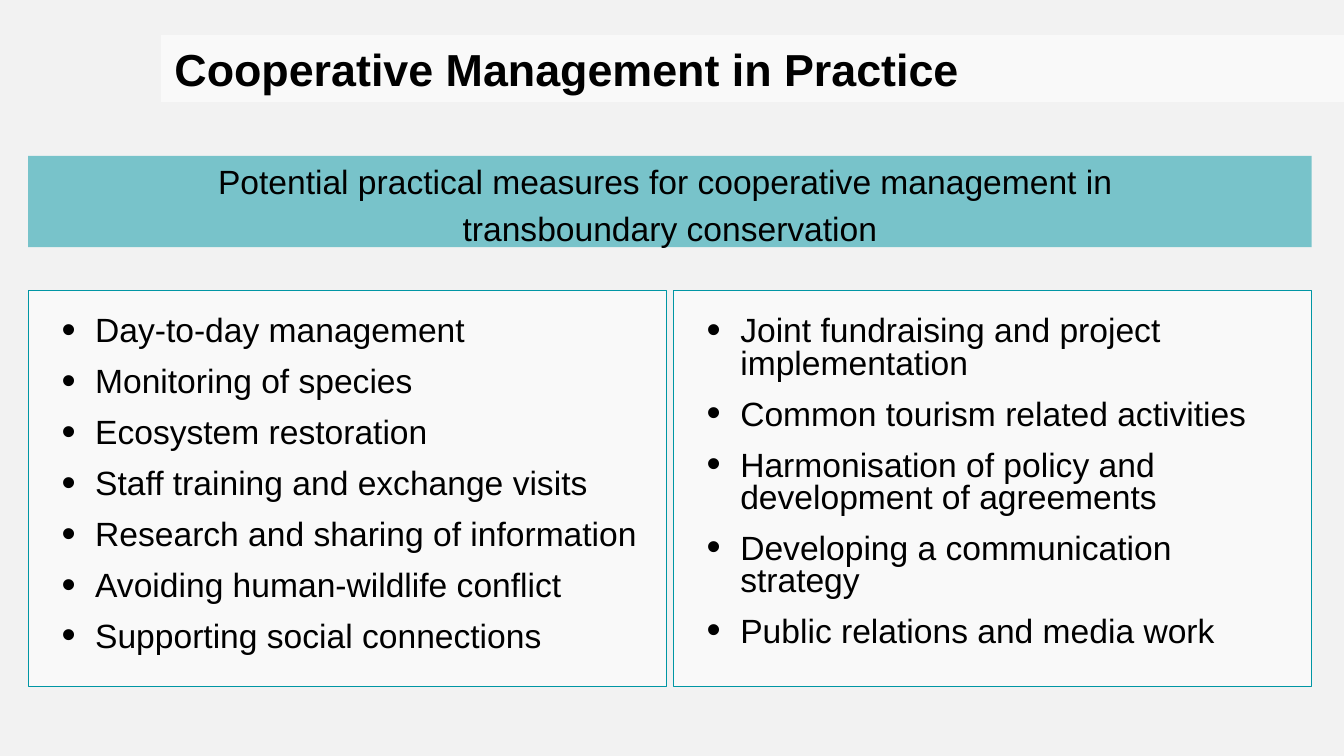
from lxml import etree
from pptx import Presentation
from pptx.dml.color import RGBColor
from pptx.enum.shapes import MSO_SHAPE
from pptx.enum.text import MSO_ANCHOR, PP_ALIGN
from pptx.oxml.ns import qn
from pptx.util import Inches, Pt

RECT = MSO_SHAPE.RECTANGLE
TOP, MIDDLE = MSO_ANCHOR.TOP, MSO_ANCHOR.MIDDLE
LEFT, CENTER = PP_ALIGN.LEFT, PP_ALIGN.CENTER

COLORS = {"back": "F2F2F2", "white": "FFFFFF", "teal": "0096A4", "text": "000000"}
FONT = "Arial"

# Grid in inches: a 16:9 slide, two columns between equal side margins
WIDTH = 10
HEIGHT = WIDTH * 9 / 16
EDGE, COL, GAP = 0.21, 4.75, 0.05
SPAN = 2 * COL + GAP

TITLE = "Cooperative Management in Practice"
BANNER = [
    "Potential practical measures for cooperative management in ",
    "transboundary conservation",
]
LISTS = [
    [
        "Day-to-day management",
        "Monitoring of species",
        "Ecosystem restoration",
        "Staff training and exchange visits",
        "Research and sharing of information",
        "Avoiding human-wildlife conflict",
        "Supporting social connections",
    ],
    [
        "Joint fundraising and project implementation",
        "Common tourism related activities",
        "Harmonisation of policy and development of agreements",
        "Developing a communication strategy",
        "Public relations and media work",
    ],
]


def color(name):
    return RGBColor.from_string(COLORS[name])


def add_panel(slide, box, fill, alpha, line=None, anchor=MIDDLE,
              insets=(0.1, 0.05, 0.1, 0.05)):
    """Add a see-through rectangle and return its text frame."""
    shape = slide.shapes.add_shape(RECT, *[Inches(n) for n in box])
    shape.shadow.inherit = False
    shape.fill.solid()
    shape.fill.fore_color.rgb = color(fill)
    tint = shape.fill._xPr.find(".//" + qn("a:srgbClr"))
    etree.SubElement(tint, qn("a:alpha"), val=str(alpha * 1000))
    if line:
        shape.line.color.rgb = color(line)
        shape.line.width = Pt(0.75)
    else:
        shape.line.fill.background()
    frame = shape.text_frame
    frame.word_wrap = True
    frame.vertical_anchor = anchor
    (frame.margin_left, frame.margin_top,
     frame.margin_right, frame.margin_bottom) = [Inches(n) for n in insets]
    return frame


def add_bullet(para):
    """Give a paragraph a hanging round bullet."""
    props = para._p.get_or_add_pPr()
    props.set("marL", str(Inches(0.4)))
    props.set("indent", str(Inches(-0.25)))
    tint = etree.SubElement(props, qn("a:buClr"))
    etree.SubElement(tint, qn("a:srgbClr"), val=COLORS["text"])
    etree.SubElement(props, qn("a:buSzPct"), val="120000")
    etree.SubElement(props, qn("a:buFont"), typeface=FONT)
    etree.SubElement(props, qn("a:buChar"), char="•")


def add_lines(frame, lines, size=18, bold=False, align=LEFT, space=1.0,
              before=0, bullet=False):
    """Write one paragraph per line of text."""
    for i, text in enumerate(lines):
        para = frame.add_paragraph() if i else frame.paragraphs[0]
        if bullet:
            add_bullet(para)
        para.alignment = align
        para.line_spacing = space
        para.space_before = Pt(before if i else 0)
        run = para.add_run()
        run.text = text
        run.font.name = FONT
        run.font.size = Pt(size)
        run.font.bold = bold
        run.font.color.rgb = color("text")


def main():
    deck = Presentation()
    deck.slide_width, deck.slide_height = Inches(WIDTH), Inches(HEIGHT)
    slide = deck.slides.add_slide(deck.slide_layouts[6])
    slide.background.fill.solid()
    slide.background.fill.fore_color.rgb = color("back")

    # Title strip, running to the right edge
    frame = add_panel(slide, (1.2, 0.26, WIDTH - 1.2, 0.5), "white", 55)
    add_lines(frame, [TITLE], size=24, bold=True)

    # Banner across both columns
    frame = add_panel(slide, (EDGE, 1.16, SPAN, 0.68), "teal", 50, insets=(0.1,) * 4)
    add_lines(frame, BANNER, align=CENTER, space=1.15)

    # Two bullet lists
    for i, lines in enumerate(LISTS):
        box = (EDGE + i * (COL + GAP), 2.16, COL, 2.95)
        frame = add_panel(slide, box, "white", 55, line="teal", anchor=TOP,
                          insets=(0.1, 0.2, 0.1, 0.05))
        add_lines(frame, lines, space=0.8, before=10, bullet=True)

    deck.save("out.pptx")


if __name__ == "__main__":
    main()
